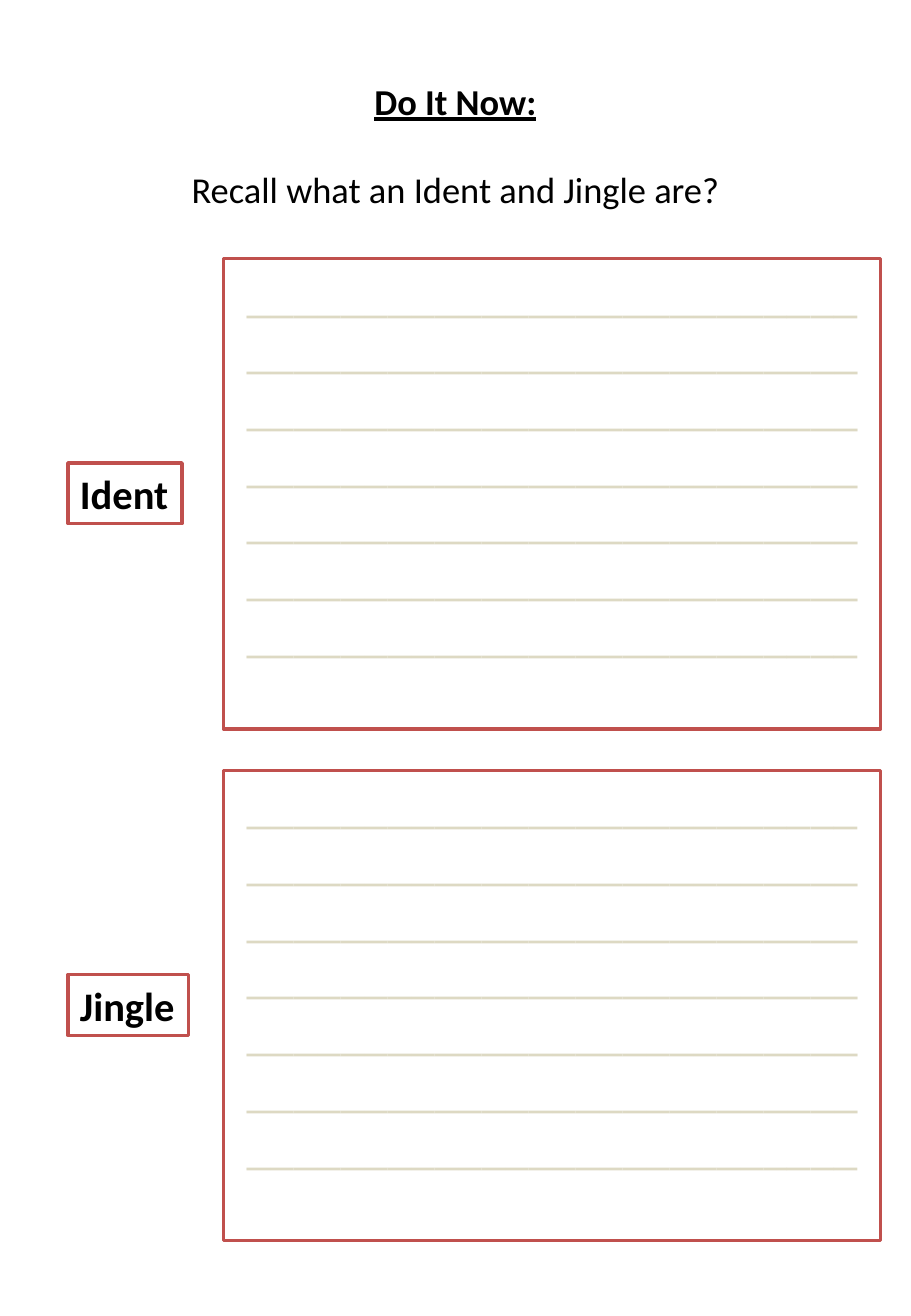
from pptx import Presentation
from pptx.dml.color import RGBColor
from pptx.enum.text import MSO_ANCHOR, MSO_AUTO_SIZE, PP_ALIGN
from pptx.util import Inches, Pt

BLACK = RGBColor(0x00, 0x00, 0x00)
WHITE = RGBColor(0xFF, 0xFF, 0xFF)
RED = RGBColor(0xC0, 0x50, 0x4D)
SAND = RGBColor(0xDD, 0xD9, 0xC3)
RULE = "_" * 26  # one writing line


def style_para(para, size, color, bold=False, underline=False):
    for span in para.runs:
        span.font.name = "Calibri"
        span.font.size = Pt(size)
        span.font.color.rgb = color
        span.font.bold = bold
        span.font.underline = underline


def add_frame(page, left, top, width, height):
    box = page.shapes.add_textbox(Inches(left), Inches(top), Inches(width), Inches(height))
    box.fill.solid()
    box.fill.fore_color.rgb = WHITE
    box.line.color.rgb = RED
    box.line.width = Pt(2)
    return box


deck = Presentation()
across = Inches(7.5) / deck.slide_width
down = Inches(10.83) / deck.slide_height
deck.slide_width = Inches(7.5)
deck.slide_height = Inches(10.83)

# Fit the template's placeholders to the portrait page
places = [
    (holder, holder.left, holder.top, holder.width, holder.height)
    for sheet in [deck.slide_master, *deck.slide_layouts]
    for holder in sheet.placeholders
]
for holder, left, top, width, height in places:
    holder.left, holder.width = int(left * across), int(width * across)
    holder.top, holder.height = int(top * down), int(height * down)

page = deck.slides.add_slide(deck.slide_layouts[5])

# Heading and question
title = page.shapes.title
title.left, title.top = Inches(0.4), Inches(0.62)
title.width, title.height = Inches(6.7), Inches(1.15)
heading = title.text_frame
heading.text = "Do It Now:\nRecall what an Ident and Jingle are?"
heading.auto_size = MSO_AUTO_SIZE.NONE
heading.vertical_anchor = MSO_ANCHOR.MIDDLE
for para in heading.paragraphs:
    para.alignment = PP_ALIGN.CENTER
heading_para, question_para = heading.paragraphs
style_para(heading_para, 21.6, BLACK, bold=True, underline=True)
style_para(question_para, 21.6, BLACK)
question_para.space_before = Pt(26.4)

# One row per term: a label and a ruled answer box
FIRST_TOP, ROW_STEP = 2.13, 4.21
LABEL_DROP = 1.68
for row, (term, label_width) in enumerate([("Ident", 0.94), ("Jingle", 0.99)]):
    top = FIRST_TOP + row * ROW_STEP

    answer = add_frame(page, 1.84, top, 5.41, 3.87)
    answer.text_frame.word_wrap = True
    answer.text_frame.text = RULE + "\n" + RULE * 6
    for para in answer.text_frame.paragraphs:
        para.alignment = PP_ALIGN.CENTER
        style_para(para, 28, SAND)

    label = add_frame(page, 0.56, top + LABEL_DROP, label_width, 0.5)
    label.text_frame.word_wrap = False
    label.text_frame.auto_size = MSO_AUTO_SIZE.SHAPE_TO_FIT_TEXT
    label.text_frame.text = term
    style_para(label.text_frame.paragraphs[0], 24, BLACK, bold=True)

deck.save("out.pptx")
